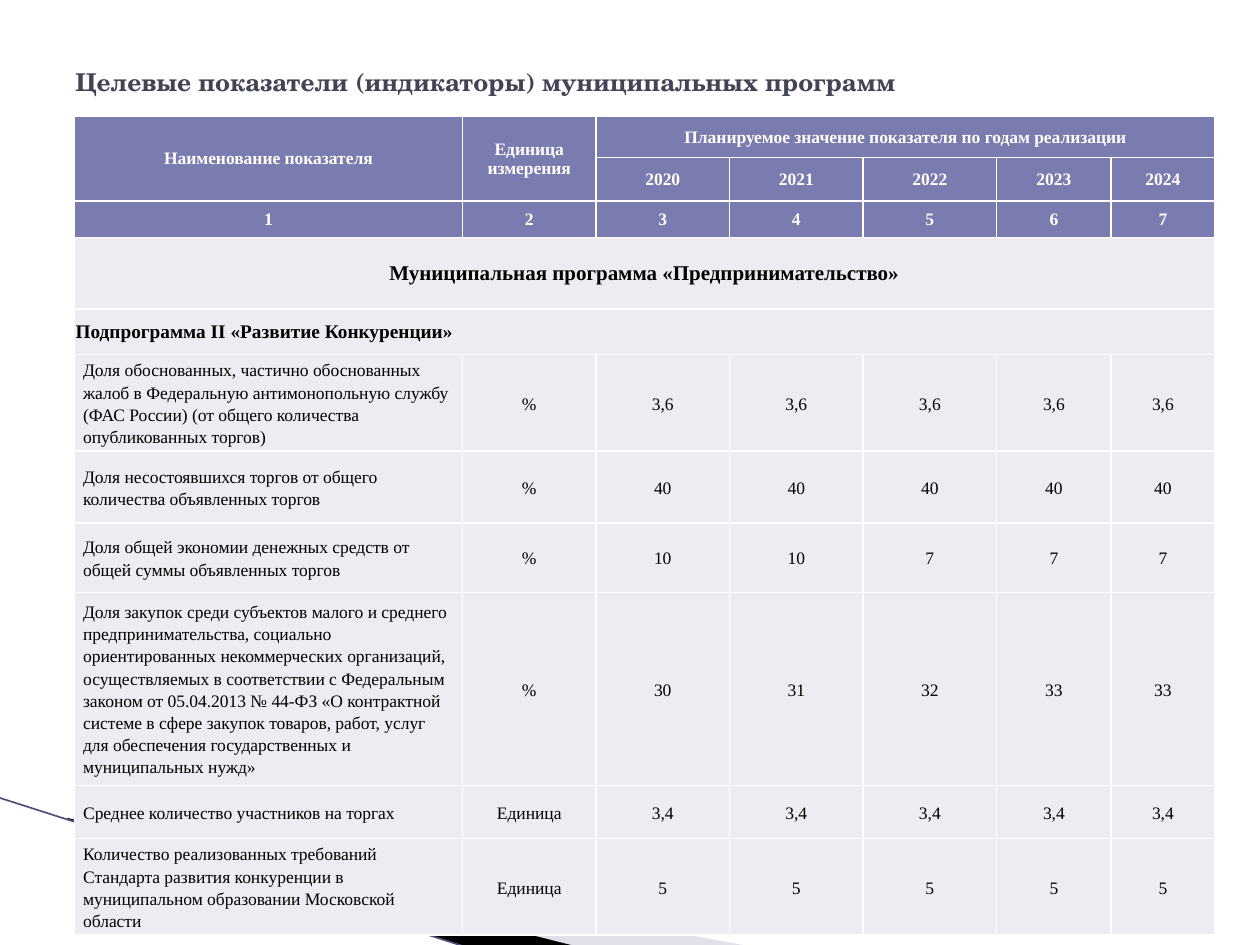
from dataclasses import dataclass
from typing import Optional

from lxml import etree
from pptx import Presentation
from pptx.dml.color import RGBColor
from pptx.enum.shapes import MSO_CONNECTOR
from pptx.enum.text import MSO_ANCHOR, PP_ALIGN
from pptx.oxml.ns import qn
from pptx.util import Inches, Pt

LEFT, CENTER = PP_ALIGN.LEFT, PP_ALIGN.CENTER
MIDDLE = MSO_ANCHOR.MIDDLE
STRAIGHT = MSO_CONNECTOR.STRAIGHT


@dataclass(frozen=True)
class Theme:
    title_font: str = "TeX Gyre Schola"
    font: str = "Times New Roman"
    title_color: str = "424456"
    header: str = "7A7BAE"
    body: str = "ECECF2"
    white: str = "FFFFFF"
    black: str = "000000"
    wedge: str = "B6B6D1"
    line: str = "4F4F7C"
    title_size: int = 14
    program_size: int = 12
    subprogram_size: int = 11
    cell_size: int = 10


@dataclass(frozen=True)
class CellStyle:
    fill: str
    color: str
    size: int
    bold: bool
    align: PP_ALIGN = CENTER
    margins: tuple = (0.01, 0.01, 0.01, 0)
    spacing: Optional[float] = None
    after: int = 0


@dataclass(frozen=True)
class Indicator:
    name: str
    unit: str
    values: tuple
    before: int = 0


@dataclass(frozen=True)
class Wedge:
    points: tuple
    color: str
    alpha: int = 100


T = Theme()
HEADER = CellStyle(T.header, T.white, T.cell_size, True)
PROGRAM = CellStyle(T.body, T.black, T.program_size, True)
SUBPROGRAM = CellStyle(T.body, T.black, T.subprogram_size, True, LEFT)
VALUE = CellStyle(T.body, T.black, T.cell_size, False, CENTER, (0.07, 0, 0.07, 0), 1.15, 10)
NAME = CellStyle(T.body, T.black, T.cell_size, False, LEFT, (0.07, 0, 0.07, 0), 1.15, 10)

WEDGES = (
    Wedge(((0.55, 6.51), (5.95, 7.51), (4.56, 7.51), (0.55, 6.5)), T.wedge, 40),
    Wedge(((0.53, 6.49), (4.57, 7.51), (3.72, 7.52), (0.54, 6.5)), T.black),
)
COL_WIDTHS = (3.08, 1.06, 1.06, 1.06, 1.06, 0.91, 0.82)
ROW_HEIGHTS = (0.33, 0.32, 0.29, 0.57, 0.36, 0.71, 0.57, 0.55, 1.41, 0.42, 0.71)
YEARS = range(2020, 2025)
FIRST_INDICATOR_ROW = 5
INDICATORS = (
    Indicator("Доля обоснованных, частично обоснованных жалоб в Федеральную антимонопольную "
              "службу (ФАС России) (от общего количества опубликованных торгов)",
              "%", ("3,6",) * 5),
    Indicator("Доля несостоявшихся торгов от общего количества объявленных торгов",
              "%", ("40",) * 5),
    Indicator("Доля общей экономии денежных средств от общей суммы объявленных торгов",
              "%", ("10", "10", "7", "7", "7")),
    Indicator("Доля закупок среди субъектов малого и среднего предпринимательства, социально "
              "ориентированных некоммерческих организаций, осуществляемых в соответствии с "
              "Федеральным законом от 05.04.2013 № 44-ФЗ «О контрактной системе в сфере закупок "
              "товаров, работ, услуг для обеспечения государственных и муниципальных нужд»",
              "%", ("30", "31", "32", "33", "33")),
    Indicator("Среднее количество участников на торгах", "Единица", ("3,4",) * 5),
    Indicator("Количество реализованных требований Стандарта развития конкуренции в "
              "муниципальном образовании Московской области",
              "Единица", ("5",) * 5, before=2),
)


def rgb(color: str) -> RGBColor:
    return RGBColor.from_string(color)


def set_font(p, name: str, size: int, color: str, bold: bool) -> None:
    p.font.name, p.font.size, p.font.bold = name, Pt(size), bold
    p.font.color.rgb = rgb(color)


def draw_wedge(s, wedge: Wedge) -> None:
    points = [(Inches(x), Inches(y)) for x, y in wedge.points]
    builder = s.shapes.build_freeform(*points[0])
    builder.add_line_segments(points[1:], close=True)
    sp = builder.convert_to_shape()
    sp.shadow.inherit = False
    sp.fill.solid()
    sp.fill.fore_color.rgb = rgb(wedge.color)
    sp.line.fill.background()
    if wedge.alpha < 100:
        clr = sp.fill._xPr.find(qn("a:solidFill"))[0]
        etree.SubElement(clr, qn("a:alpha"), val=str(wedge.alpha * 1000))


def draw_line(s) -> None:
    line = s.shapes.add_connector(STRAIGHT, Inches(-0.01), Inches(6.33), Inches(3.71), Inches(7.52))
    line.line.color.rgb = rgb(T.line)
    line.line.width = Pt(0.95)
    etree.SubElement(line._element.spPr, qn("a:effectLst"))


def draw_title(s, text: str) -> None:
    box = s.shapes.add_textbox(Inches(0.5), Inches(0.3), Inches(9), Inches(0.69))
    tf = box.text_frame
    tf.word_wrap = True
    tf.vertical_anchor = MIDDLE
    p = tf.paragraphs[0]
    p.text = text
    set_font(p, T.title_font, T.title_size, T.title_color, True)


def style_cell(cell, style: CellStyle, before: int = 0) -> None:
    cell.vertical_anchor = MIDDLE
    (cell.margin_left, cell.margin_top,
     cell.margin_right, cell.margin_bottom) = map(Inches, style.margins)
    p = cell.text_frame.paragraphs[0]
    p.alignment = style.align
    if style.spacing:
        p.line_spacing = style.spacing
        p.space_after = Pt(style.after)
    if before:
        p.space_before = Pt(before)
    set_font(p, T.font, style.size, style.color, style.bold)
    # Borders come before the fill in the cell properties
    tc_pr = cell._tc.get_or_add_tcPr()
    for side in ("lnL", "lnR", "lnT", "lnB"):
        ln = etree.SubElement(tc_pr, qn(f"a:{side}"), w=str(Pt(1)))
        fill = etree.SubElement(ln, qn("a:solidFill"))
        etree.SubElement(fill, qn("a:srgbClr"), val=T.white)
    cell.fill.solid()
    cell.fill.fore_color.rgb = rgb(style.fill)


def fill_row(table, row: int, texts: tuple, style: CellStyle,
             first: Optional[CellStyle] = None, before: int = 0) -> None:
    for col, text in enumerate(texts):
        cell = table.cell(row, col)
        cell.text = text
        style_cell(cell, first if first and col == 0 else style, before if col > 1 else 0)


def draw_table(s) -> None:
    rows, cols = len(ROW_HEIGHTS), len(COL_WIDTHS)
    table = s.shapes.add_table(rows, cols, Inches(0.59), Inches(0.92), Inches(sum(COL_WIDTHS)),
                               Inches(sum(ROW_HEIGHTS))).table
    table.first_row = table.horz_banding = False
    for column, width in zip(table.columns, COL_WIDTHS):
        column.width = Inches(width)
    for row, height in zip(table.rows, ROW_HEIGHTS):
        row.height = Inches(height)

    # Header and section rows
    blank = ("",) * (cols - 1)
    fill_row(table, 0, ("Наименование показателя", "Единица измерения",
                        "Планируемое значение показателя по годам реализации", *blank[2:]), HEADER)
    fill_row(table, 1, ("", "", *map(str, YEARS)), HEADER)
    fill_row(table, 2, tuple(str(n + 1) for n in range(cols)), HEADER)
    fill_row(table, 3, ("Муниципальная программа «Предпринимательство»", *blank), PROGRAM)
    fill_row(table, 4, ("Подпрограмма II «Развитие Конкуренции»", *blank), SUBPROGRAM)

    # Indicator rows
    for row, item in enumerate(INDICATORS, FIRST_INDICATOR_ROW):
        fill_row(table, row, (item.name, item.unit, *item.values), VALUE, NAME, item.before)

    # Merged cells: first row, first column, last row, last column
    for r1, c1, r2, c2 in ((0, 0, 1, 0), (0, 1, 1, 1), (0, 2, 0, 6), (3, 0, 3, 6), (4, 0, 4, 6)):
        table.cell(r1, c1).merge(table.cell(r2, c2))


def main() -> None:
    prs = Presentation()
    prs.slide_width, prs.slide_height = Inches(10), Inches(7.5)
    s = prs.slides.add_slide(prs.slide_layouts[6])
    # Corner decoration
    for wedge in WEDGES:
        draw_wedge(s, wedge)
    draw_line(s)
    # Content
    draw_title(s, "Целевые показатели (индикаторы) муниципальных программ")
    draw_table(s)
    prs.save("out.pptx")


if __name__ == "__main__":
    main()
